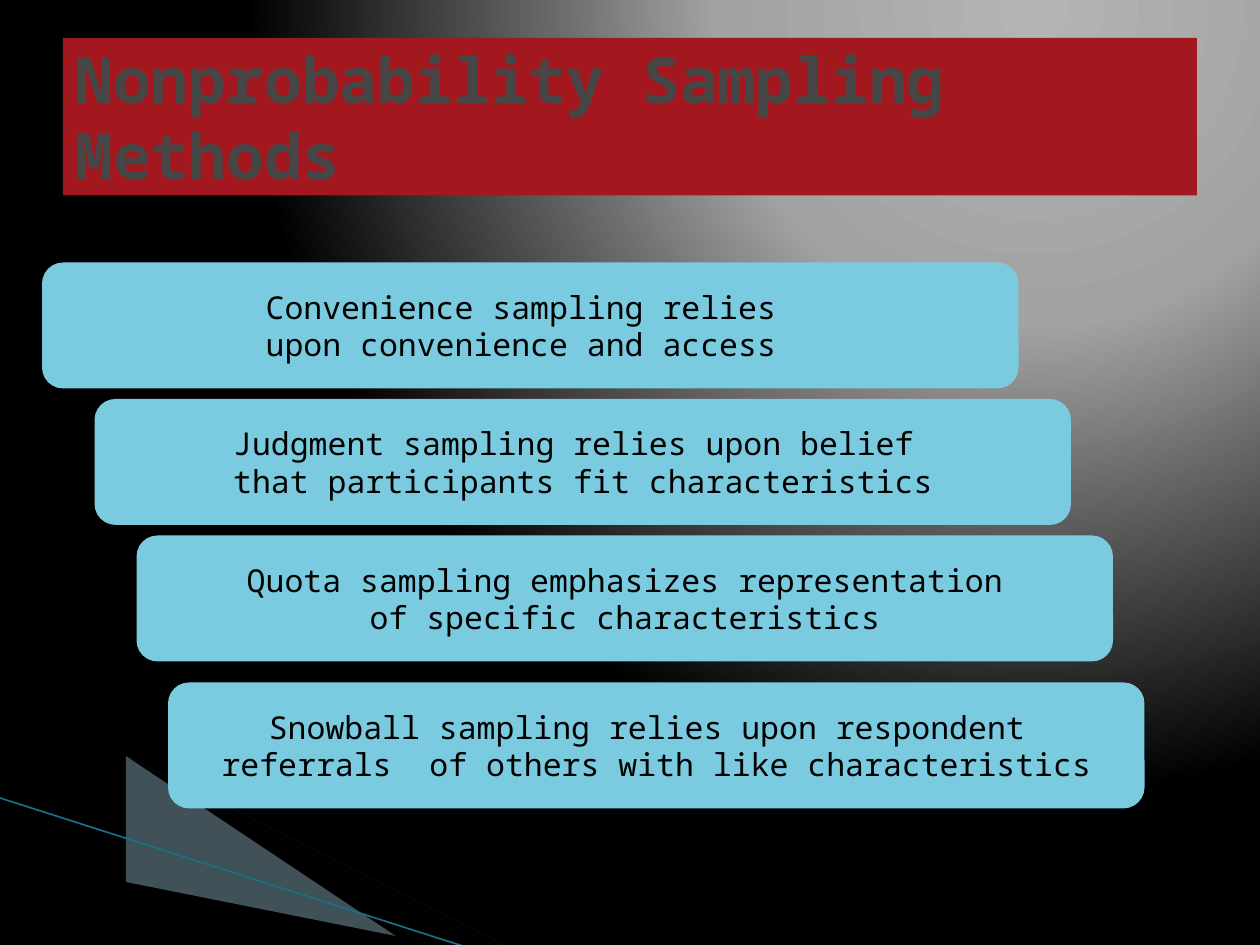
from typing import NamedTuple

from lxml import etree
from pptx import Presentation
from pptx import util as u
from pptx.dml.color import RGBColor
from pptx.enum import shapes, text
from pptx.oxml import parse_xml
from pptx.oxml.ns import nsdecls, qn

WIDTH, HEIGHT = u.Inches(10), u.Inches(7.5)
CELL = WIDTH // 120  # the slide is a grid of 120 columns by 90 rows
FONT = "Noto Sans Mono"
BLACK, RED, SKY, GREY = "000000", "A3171E", "7ACBE0", "464646"
MIST, TEAL = "A0CBDC", "1A7085"


class Step(NamedTuple):
    column: int
    row: int
    lines: tuple[str, ...]


class Wedge(NamedTuple):
    points: tuple[tuple[float, float], ...]  # inches
    color: str
    opacity: int  # percent


STEPS = (
    Step(4, 25, ("Convenience sampling relies ", "upon convenience and access ")),
    Step(9, 38, ("Judgment sampling relies upon belief ",
                 "that participants fit characteristics")),
    Step(13, 51, ("Quota sampling emphasizes representation",
                  "of specific characteristics")),
    Step(16, 65, ("Snowball sampling relies upon respondent ",
                  "referrals  of others with like characteristics")),
)
WEDGES = (
    Wedge(((0.55, 6.51), (5.95, 7.51), (4.56, 7.51), (0.55, 6.5)), MIST, 40),
    Wedge(((0.53, 6.49), (4.57, 7.51), (3.72, 7.52), (0.54, 6.5)), BLACK, 100),
)


def rgb(color: str) -> RGBColor:
    return RGBColor.from_string(color)


def paint_background(page) -> None:
    """Fill the page with a circular gradient that glows from the top right."""
    page.background.fill.solid()
    properties = page.background._cSld.bg.bgPr
    stops = "".join(
        f'<a:gs pos="{share * 1000}"><a:srgbClr val="{color}"/></a:gs>'
        for share, color in ((0, "B4B4B4"), (40, "A2A2A2"), (100, BLACK)))
    gradient = parse_xml(
        f'<a:gradFill {nsdecls("a")} rotWithShape="1"><a:gsLst>{stops}</a:gsLst>'
        '<a:path path="circle"><a:fillToRect l="65000" b="98000"/></a:path></a:gradFill>')
    properties.replace(properties.find(qn("a:solidFill")), gradient)


def fill_plain(shape, color: str) -> None:
    shape.shadow.inherit = False
    shape.fill.solid()
    shape.fill.fore_color.rgb = rgb(color)
    shape.line.fill.background()


def draw_wedge(page, wedge: Wedge) -> None:
    start, *rest = wedge.points
    builder = page.shapes.build_freeform(*start, scale=u.Inches(1))
    builder.add_line_segments(rest, close=True)
    shape = builder.convert_to_shape()
    fill_plain(shape, wedge.color)
    if wedge.opacity < 100:
        color = shape._element.spPr.find(qn("a:solidFill"))[0]
        etree.SubElement(color, qn("a:alpha"), val=str(wedge.opacity * 1000))


def draw_edge_line(page) -> None:
    ends = [u.Inches(n) for n in (-0.01, 6.33, 3.71, 7.52)]
    line = page.shapes.add_connector(shapes.MSO_CONNECTOR.STRAIGHT, *ends)
    line.line.color.rgb = rgb(TEAL)
    line.line.width = u.Pt(0.95)
    etree.SubElement(line._element.spPr, qn("a:effectLst"))


def draw_box(page, kind, column: float, row: float, columns: float, rows: float,
             color: str):
    box = page.shapes.add_shape(
        kind, *(round(n * CELL) for n in (column, row, columns, rows)))
    fill_plain(box, color)
    return box


def write(box, lines: tuple[str, ...], *, size: int, color: str, align,
          bold: bool = False, wrap: bool = False) -> None:
    frame = box.text_frame
    frame.word_wrap = wrap
    frame.vertical_anchor = text.MSO_ANCHOR.MIDDLE
    for index, line in enumerate(lines):
        para = frame.add_paragraph() if index else frame.paragraphs[0]
        para.alignment = align
        span = para.add_run()
        span.text = line
        span.font.name = FONT
        span.font.size = u.Pt(size)
        span.font.bold = bold
        span.font.color.rgb = rgb(color)


def main() -> None:
    deck = Presentation()
    deck.slide_width, deck.slide_height = WIDTH, HEIGHT
    page = deck.slides.add_slide(deck.slide_layouts[6])
    paint_background(page)
    for wedge in WEDGES:
        draw_wedge(page, wedge)
    draw_edge_line(page)

    title = draw_box(page, shapes.MSO_SHAPE.RECTANGLE, 6, 3.6, 108, 15, RED)
    write(title, ("Nonprobability Sampling Methods",), size=36, color=GREY,
          align=text.PP_ALIGN.LEFT, bold=True, wrap=True)
    for step in STEPS:
        box = draw_box(page, shapes.MSO_SHAPE.ROUNDED_RECTANGLE,
                       step.column, step.row, 93, 12, SKY)
        write(box, step.lines, size=18, color=BLACK, align=text.PP_ALIGN.CENTER)
    deck.save("out.pptx")


if __name__ == "__main__":
    main()
